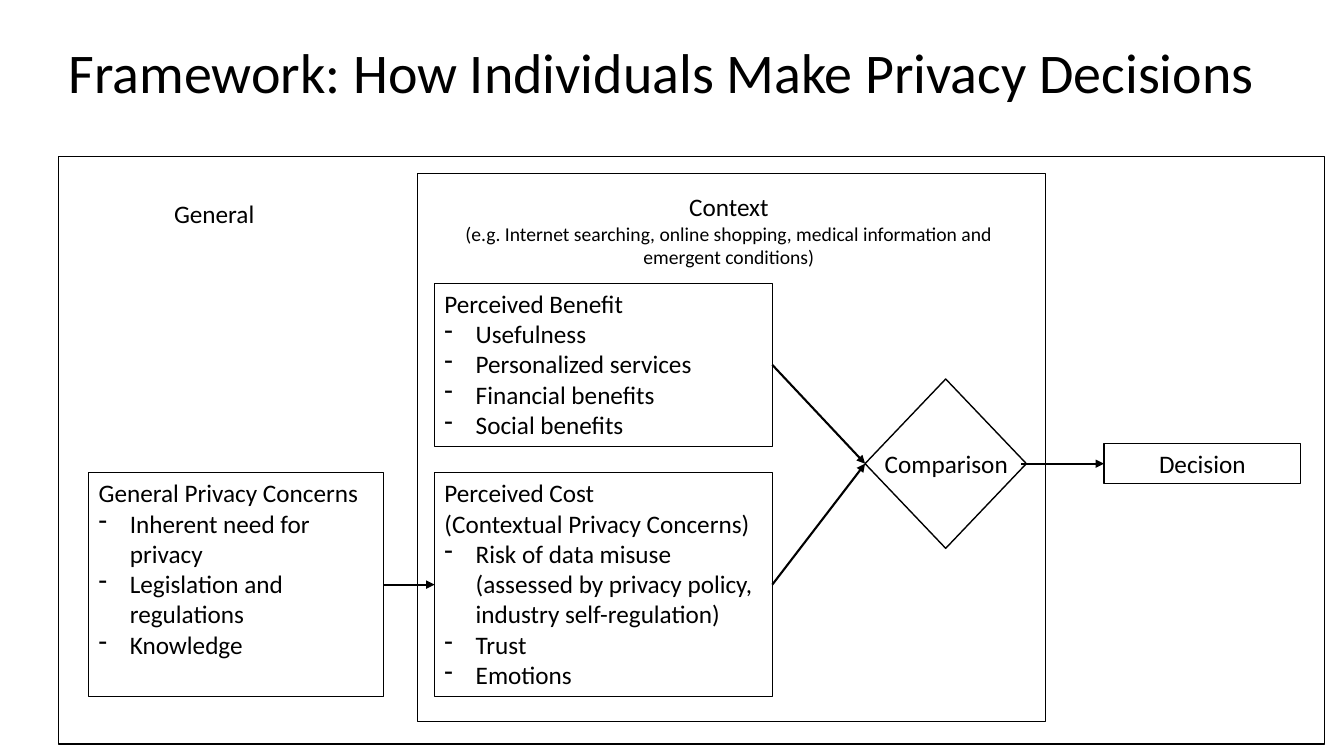
"""Build the slide showing the framework of individual privacy decisions."""
from lxml.etree import SubElement
from pptx import Presentation
from pptx.dml.color import RGBColor
from pptx.enum.shapes import MSO_CONNECTOR, MSO_SHAPE
from pptx.enum.text import MSO_ANCHOR, MSO_AUTO_SIZE, PP_ALIGN
from pptx.oxml.ns import qn
from pptx.util import Inches, Pt

BLACK = RGBColor(0, 0, 0)
WHITE = RGBColor(255, 255, 255)
FONT = "Calibri"
BULLET = "- "
INDENT = Inches(0.31)


def add_outline(kind, bounds, width=1, fill=None):
    shape = slide.shapes.add_shape(kind, *map(Inches, bounds))
    shape.shadow.inherit = False
    if fill is None:
        shape.fill.background()
    else:
        shape.fill.solid()
        shape.fill.fore_color.rgb = fill
    shape.line.color.rgb = BLACK
    shape.line.width = Pt(width)
    return shape


def write(box, lines, align=PP_ALIGN.LEFT, size=18):
    frame = box.text_frame
    frame.word_wrap = True
    frame.vertical_anchor = MSO_ANCHOR.TOP
    frame.text = "\n".join(line.removeprefix(BULLET) for line in lines)
    for para, line in zip(frame.paragraphs, lines):
        para.alignment = align
        if line.startswith(BULLET):
            properties = para._p.get_or_add_pPr()
            properties.set("marL", str(INDENT))
            properties.set("indent", str(-INDENT))
            SubElement(properties, qn("a:buFontTx"))
            SubElement(properties, qn("a:buChar"), char="-")
        for span in para.runs:
            span.font.name = FONT
            span.font.size = Pt(size)
            span.font.color.rgb = BLACK


deck = Presentation()
deck.slide_width = Inches(13.33)
deck.slide_height = Inches(7.5)
slide = deck.slides.add_slide(deck.slide_layouts[5])

title = slide.shapes.title
title.left, title.top, title.width, title.height = map(Inches, (0.58, 0.02, 12.56, 1.45))
write(title, ["Framework: How Individuals Make Privacy Decisions"], size=40)
title.text_frame.vertical_anchor = MSO_ANCHOR.MIDDLE
title.text_frame.auto_size = MSO_AUTO_SIZE.NONE
title.text_frame.paragraphs[0].line_spacing = 0.9

add_outline(MSO_SHAPE.RECTANGLE, (4.14, 1.72, 6.23, 5.44))
add_outline(MSO_SHAPE.RECTANGLE, (0.58, 1.55, 12.56, 5.83))

concerns = add_outline(MSO_SHAPE.RECTANGLE, (0.88, 4.69, 2.92, 2.22), 0.75)
write(concerns, [
    "General Privacy Concerns",
    "- Inherent need for privacy",
    "- Legislation and regulations",
    "- Knowledge",
])

benefit = add_outline(MSO_SHAPE.RECTANGLE, (4.31, 2.81, 3.35, 1.62), fill=WHITE)
write(benefit, [
    "Perceived Benefit",
    "- Usefulness",
    "- Personalized services",
    "- Financial benefits",
    "- Social benefits",
])

cost = add_outline(MSO_SHAPE.RECTANGLE, (4.31, 4.69, 3.35, 2.22), 0.75)
write(cost, [
    "Perceived Cost",
    "(Contextual Privacy Concerns)",
    "- Risk of data misuse\v(assessed by privacy policy, industry self-regulation)",
    "- Trust",
    "- Emotions",
])

diamond = add_outline(MSO_SHAPE.DIAMOND, (8.58, 3.76, 1.6, 1.68), fill=WHITE)
decision = add_outline(MSO_SHAPE.RECTANGLE, (10.95, 4.4, 1.95, 0.4), fill=WHITE)
write(decision, ["Decision"], PP_ALIGN.CENTER)

labels = {}
for name, bounds, details in [
    ("General", (0.99, 1.92, 2.27, 0.4), []),
    ("Context", (4.48, 1.85, 5.5, 0.88), [
        "(e.g. Internet searching, online shopping, medical information and emergent conditions)",
    ]),
    ("Comparison", (8.64, 4.4, 1.49, 0.4), []),
]:
    labels[name] = slide.shapes.add_textbox(*map(Inches, bounds))
    write(labels[name], [name, *details], PP_ALIGN.CENTER)
labels["Context"].text_frame.paragraphs[1].runs[0].font.size = Pt(14)

for source, target in [
    (concerns, cost),
    (benefit, diamond),
    (cost, diamond),
    (labels["Comparison"], decision),
]:
    arrow = slide.shapes.add_connector(MSO_CONNECTOR.STRAIGHT, 0, 0, 0, 0)
    arrow.begin_connect(source, 3)
    arrow.end_connect(target, 1)
    arrow.line.color.rgb = BLACK
    arrow.line.width = Pt(1.5)
    SubElement(arrow.line._get_or_add_ln(), qn("a:tailEnd"), type="triangle")
    SubElement(arrow._element.spPr, qn("a:effectLst"))

deck.save("out.pptx")
